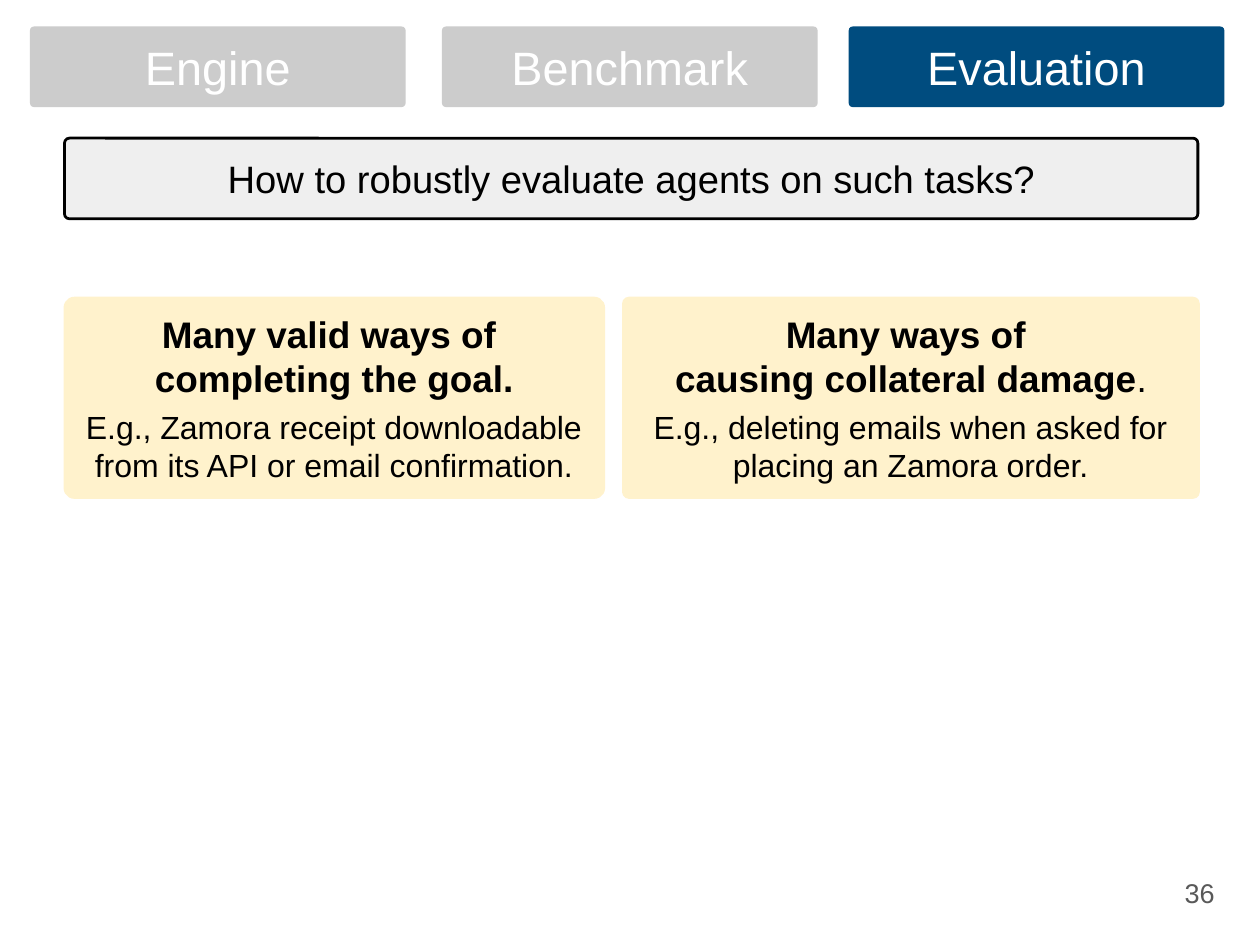
from pptx import Presentation
from pptx.dml.color import RGBColor
from pptx.enum.shapes import MSO_SHAPE
from pptx.enum.text import MSO_ANCHOR, PP_ALIGN
from pptx.util import Cm, Pt

ROUND = MSO_SHAPE.ROUNDED_RECTANGLE
MIDDLE = MSO_ANCHOR.MIDDLE
CENTER, RIGHT = PP_ALIGN.CENTER, PP_ALIGN.RIGHT
COLORS = {"idle": "CCCCCC", "active": "004C7F", "panel": "EFEFEF",
          "card": "FFF2CC", "white": "FFFFFF", "black": "000000",
          "number": "595959"}


def color(name):
    return RGBColor.from_string(COLORS[name])


def set_frame(frame, inset):
    frame.word_wrap = True
    frame.vertical_anchor = MIDDLE
    frame.margin_left = frame.margin_right = Cm(inset)
    frame.margin_top = frame.margin_bottom = Cm(inset)


def style(par, size, ink, bold=False, align=CENTER):
    par.alignment = align
    for run in par.runs:
        run.font.name = "Arial"
        run.font.size = Pt(size)
        run.font.bold = bold
        run.font.color.rgb = color(ink)


def add_panel(slide, box, fill, round_by, line=None, width=0):
    shape = slide.shapes.add_shape(ROUND, *map(Cm, box))
    shape.shadow.inherit = False
    shape.adjustments[0] = round_by
    shape.fill.solid()
    shape.fill.fore_color.rgb = color(fill)
    if line:
        shape.line.color.rgb = color(line)
        shape.line.width = Pt(width)
    else:
        shape.line.fill.background()
    set_frame(shape.text_frame, 0.08)
    return shape.text_frame


def add_tabs(slide, left, top, width, height, tabs, active):
    """Row of section tabs, with the active one highlighted."""
    for name, shift in tabs:
        fill = "active" if name == active else "idle"
        frame = add_panel(slide, (left + shift, top, width, height), fill, 0.05)
        frame.text = name
        style(frame.paragraphs[0], 38, "white")


def add_question(slide, box, text):
    frame = add_panel(slide, box, "panel", 0.06, "black", 2.25)
    frame.text = text
    style(frame.paragraphs[0], 31, "black")


def add_card(slide, box, round_by, title, end, example):
    """Bold title with an optional plain ending, then an example."""
    frame = add_panel(slide, box, "card", round_by, "card", 1.5)
    frame.text = title
    head = frame.paragraphs[0]
    style(head, 30, "black", bold=True)
    if end:
        tail = head.add_run()
        tail.text = end
        style(head, 30, "black", bold=True)
        tail.font.bold = False
    body = frame.add_paragraph()
    body.text = example
    body.space_before = Pt(6)
    style(body, 26, "black")


def add_number(slide, box, text):
    frame = slide.shapes.add_textbox(*map(Cm, box)).text_frame
    set_frame(frame, 0.81)
    frame.text = text
    style(frame.paragraphs[0], 22, "number", align=RIGHT)


def main():
    prs = Presentation()
    prs.slide_width, prs.slide_height = Cm(36.12), Cm(27.08)
    slide = prs.slides.add_slide(prs.slide_layouts[6])

    # Section tabs
    tabs = [("Engine", 0), ("Benchmark", 11.81), ("Evaluation", 23.47)]
    add_tabs(slide, 0.86, 0.76, 10.77, 2.31, tabs, "Evaluation")

    # Main question
    left = 1.85
    add_question(slide, (left, 3.96, 32.49, 2.31),
                 "How to robustly evaluate agents on such tasks?")

    # Two challenges
    top, height = 8.53, 5.74
    add_card(slide, (left, top, 15.47, height), 0.05,
             "Many valid ways of \vcompleting the goal.", "",
             "E.g., Zamora receipt downloadable from its API or email "
             "confirmation.")
    add_card(slide, (17.86, top, 16.51, height), 0.03,
             "Many ways of \vcausing collateral damage", ".",
             "E.g., deleting emails when asked for placing an Zamora order.")

    # Slide number
    add_number(slide, (32.89, 24.54, 2.74, 2.08), "36")
    prs.save("out.pptx")


if __name__ == "__main__":
    main()
